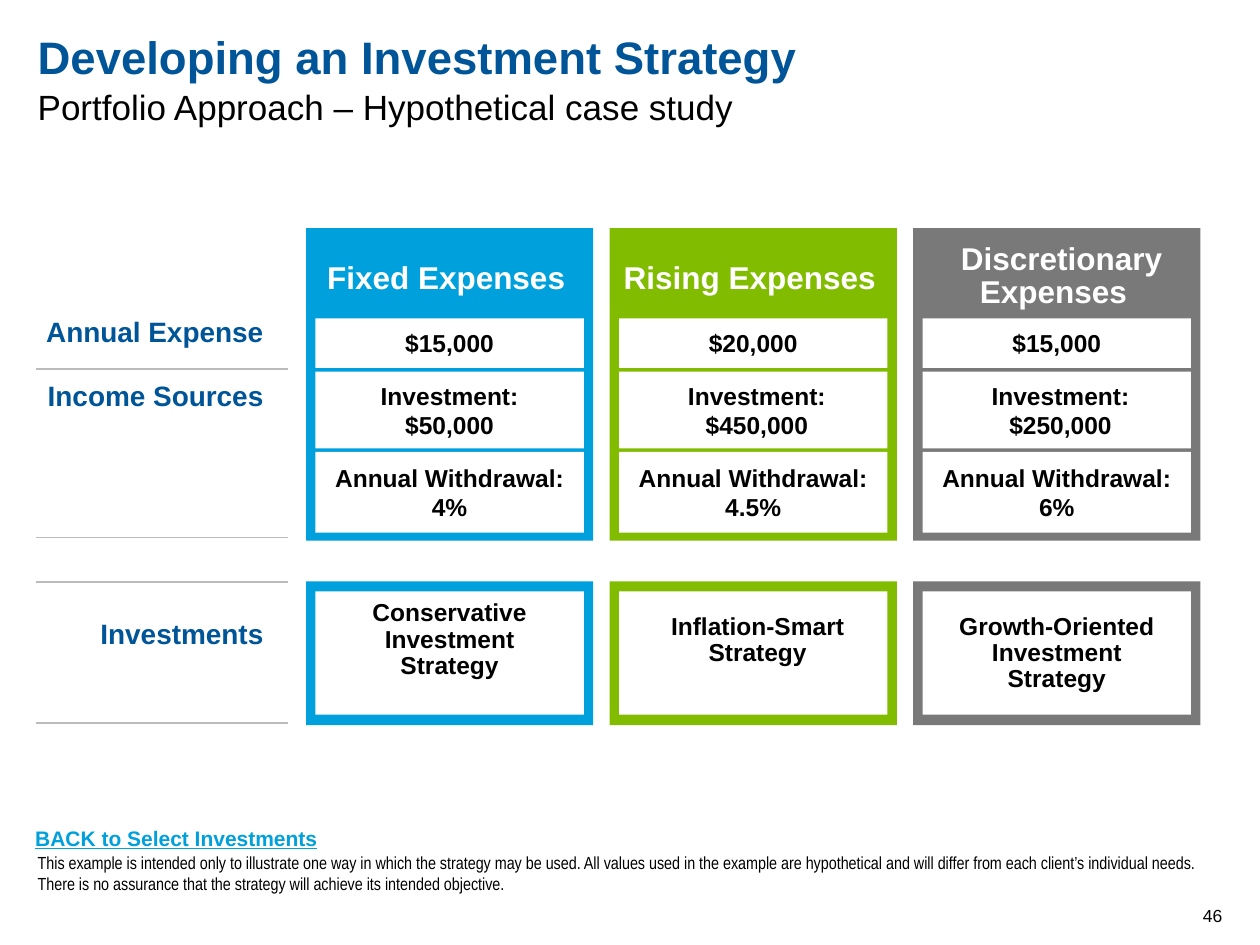
"""Build the slide on a portfolio approach to an investment strategy."""
from lxml import etree
from pptx import Presentation
from pptx import util as u
from pptx.dml.color import RGBColor
from pptx.enum import shapes, text
from pptx.oxml.ns import qn

COLORS = {"navy": "005598", "blue": "00A0DC", "green": "82BC00", "gray": "797979",
          "white": "FFFFFF", "black": "000000", "rule": "BBBBBB"}
LEFT, CENTER, RIGHT = text.PP_ALIGN.LEFT, text.PP_ALIGN.CENTER, text.PP_ALIGN.RIGHT
TOP, MIDDLE, BOTTOM = text.MSO_ANCHOR.TOP, text.MSO_ANCHOR.MIDDLE, text.MSO_ANCHOR.BOTTOM
NO_INSET, INSET = (0, 0, 0, 0), (0.25, 0.13, 0.25, 0.13)

TEXTS = [
    ("Developing an Investment Strategy", (0.76, 0.58, 17.78, 2.03),
     dict(size=26, color="navy", bold=True, inset=NO_INSET)),
    ("Portfolio Approach – Hypothetical case study", (0.76, 1.52, 17.78, 1.02),
     dict(size=20, inset=(0, 0.2, 0.25, 0.13))),
    ("This example is intended only to illustrate one way in which the strategy may be used. "
     "All values used in the example are hypothetical and will differ from each client’s "
     "individual needs. There is no assurance that the strategy will achieve its intended "
     "objective.", (0.76, 17.17, 23.88, 0.86),
     dict(size=10, name="Arial Narrow", anchor=BOTTOM, inset=NO_INSET)),
    ("46", (23.62, 18.16, 1.02, 0.51),
     dict(size=10, align=RIGHT, anchor=BOTTOM, inset=NO_INSET)),
    ("BACK to Select Investments", (0.46, 16.51, 6.25, 0.76),
     dict(size=12, color="blue", bold=True, underline=True, wrap=False)),
]

TABLE_AT = (0.74, 3.89)
TABLE_COLS = [5.08, 4.17, 5.18, 4.62, 4.6]
TABLE_ROWS = [2.08, 1.47, 1.65, 1.75, 0.89, 2.84]
ROW_LABELS = {1: ("Annual Expense", MIDDLE, 0.13), 2: ("Income Sources", TOP, 0.25),
              5: ("Investments", TOP, 0.76)}
RULED_ROWS = [1, 3, 4, 5]

PORTFOLIOS = [
    dict(color="blue", title=["Fixed Expenses"], expense="$15,000", investment="$50,000",
         withdrawal="4%", strategy="Conservative Investment\vStrategy",
         strategy_format=dict(inset=(0.25, 0.13, 0.25, 0.66))),
    dict(color="green", title=["Rising Expenses"], expense="$20,000", investment="$450,000",
         withdrawal="4.5%", strategy="Inflation-Smart\vStrategy",
         investment_format=dict(indent=0.15),
         strategy_format=dict(anchor=TOP, inset=(0, 0.46, 0.15, 0.13), margin=0.33)),
    dict(color="gray", title=["Discretionary", "Expenses"], expense="$15,000",
         investment="$250,000", withdrawal="6%",
         strategy="Growth-Oriented Investment\vStrategy",
         title_format=dict(margin=0.33, spacing=19),
         investment_format=dict(indent=0.15)),
]
FIRST_LEFT, STEP = 6.17, 6.12
CARD_WIDTH, CELL_WIDTH = 5.79, 5.41


def rgb(name):
    return RGBColor.from_string(COLORS[name])


def write(tf, lines, size, color="black", name="Arial", bold=False, underline=False,
          align=LEFT, anchor=TOP, inset=INSET, wrap=True, margin=0, indent=0, spacing=None):
    sides = ("margin_left", "margin_top", "margin_right", "margin_bottom")
    frame = dict(zip(sides, map(u.Cm, inset)), vertical_anchor=anchor, word_wrap=wrap)
    for key, value in frame.items():
        setattr(tf, key, value)
    for i, line in enumerate(lines):
        p = tf.add_paragraph() if i else tf.paragraphs[0]
        p.text = line
        p.alignment = align
        if spacing:
            p.line_spacing = u.Pt(spacing)
        pPr = p._p.get_or_add_pPr()
        pPr.set("marL", str(u.Cm(0 if i else margin)))
        pPr.set("indent", str(u.Cm(indent)))
        font = dict(size=u.Pt(size), name=name, bold=bold, underline=underline)
        for r in p.runs:
            for key, value in font.items():
                setattr(r.font, key, value)
            r.font.color.rgb = rgb(color)


def add_box(parent, at, fill, lines=(), **style):
    sp = parent.add_shape(shapes.MSO_SHAPE.RECTANGLE, *map(u.Cm, at))
    sp.shadow.inherit = False
    sp.fill.solid()
    sp.fill.fore_color.rgb = rgb(fill)
    sp.line.fill.background()
    if lines:
        write(sp.text_frame, lines, **{**dict(size=14, bold=True, align=CENTER,
                                              anchor=MIDDLE), **style})


def add_rule(cell, side):
    ln = etree.Element(qn("a:" + side), w=str(u.Pt(1)))
    fill = etree.SubElement(ln, qn("a:solidFill"))
    etree.SubElement(fill, qn("a:srgbClr"), val=COLORS["rule"])
    cell._tc.get_or_add_tcPr().insert(0, ln)


def add_label_table(s):
    size = sum(TABLE_COLS), sum(TABLE_ROWS)
    table = s.shapes.add_table(len(TABLE_ROWS), len(TABLE_COLS),
                               *map(u.Cm, TABLE_AT + size)).table
    table.first_row = table.horz_banding = False
    for column, width in zip(table.columns, TABLE_COLS):
        column.width = u.Cm(width)
    for row, height in zip(table.rows, TABLE_ROWS):
        row.height = u.Cm(height)
    for cell in table.iter_cells():
        cell.fill.background()
        cell.margin_top = cell.margin_bottom = 0
    for col in range(2, len(TABLE_COLS)):
        table.cell(0, col).merge(table.cell(len(TABLE_ROWS) - 1, col))
    for row, (label, anchor, top) in ROW_LABELS.items():
        cell = table.cell(row, 0)
        write(cell.text_frame, [label], 16, "navy", bold=True, align=RIGHT)
        cell.vertical_anchor = anchor
        cell.margin_left, cell.margin_top = 0, u.Cm(top)
        cell.margin_right, cell.margin_bottom = u.Cm(0.51), u.Cm(0.13)
    for row in RULED_ROWS:
        add_rule(table.cell(row, 0), "lnB")
    for row in RULED_ROWS[:-1]:
        add_rule(table.cell(row + 1, 0), "lnT")


def add_portfolio(s, left, d):
    group = s.shapes.add_group_shape().shapes
    for top, height in ((11.72, 2.9), (4.6, 6.3)):
        add_box(group, (left, top, CARD_WIDTH, height), d["color"])
    cells = [
        (6.38, 1.04, [d["expense"]], {}),
        (7.49, 1.55, ["Investment:", d["investment"]],
         dict(inset=(0.13,) * 4, **d.get("investment_format", {}))),
        (9.11, 1.63, ["Annual Withdrawal:", d["withdrawal"]], {}),
        (11.92, 2.49, [d["strategy"]], dict(spacing=15, **d.get("strategy_format", {}))),
    ]
    for top, height, lines, style in cells:
        add_box(group, (left + 0.19, top, CELL_WIDTH, height), "white", lines, **style)
    add_box(group, (left + 0.03, 4.74, 5.59, 1.68), d["color"], d["title"], size=18,
            color="white", wrap=False, **d.get("title_format", {}))


def main():
    prs = Presentation()
    prs.slide_width, prs.slide_height = u.Cm(25.4), u.Cm(19.05)
    s = prs.slides.add_slide(prs.slide_layouts[6])
    add_label_table(s)
    for i, portfolio in enumerate(PORTFOLIOS):
        add_portfolio(s, FIRST_LEFT + i * STEP, portfolio)
    for words, at, style in TEXTS:
        write(s.shapes.add_textbox(*map(u.Cm, at)).text_frame, [words], **style)
    prs.save("out.pptx")


if __name__ == "__main__":
    main()
